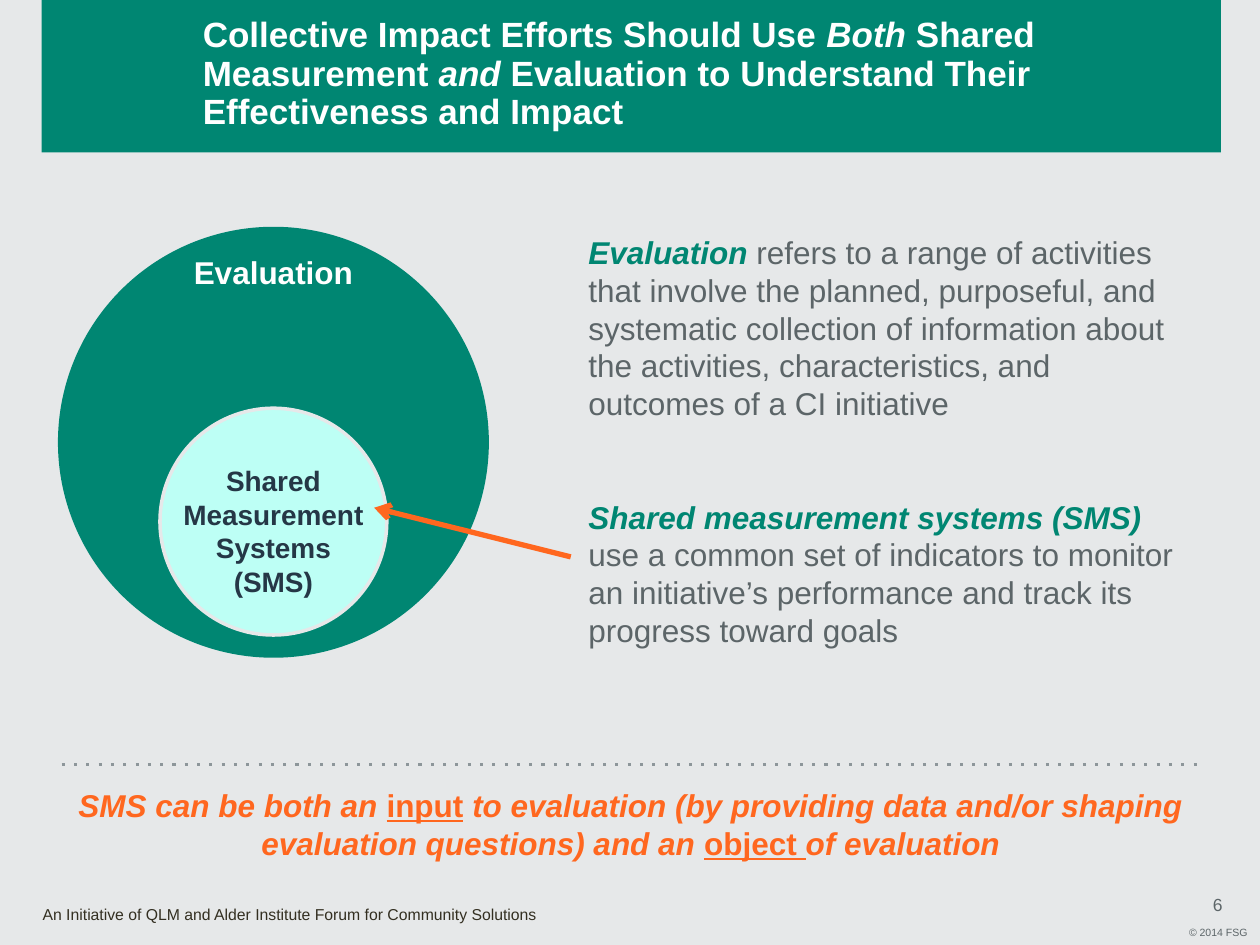
"""Build a slide on shared measurement and evaluation, laid out on a 100 by 75 grid."""
from dataclasses import dataclass
from typing import NamedTuple, Optional

import lxml.etree
import pptx
import pptx.dml.color
import pptx.enum.shapes
import pptx.enum.text
import pptx.oxml.ns
import pptx.util

WIDE, HIGH = pptx.util.Inches(10), pptx.util.Inches(7.5)
COLS, ROWS = 100, 75
HUES = {
    "back": "E6E8E9", "green": "008672", "mint": "BDFFF5", "orange": "FF671F",
    "white": "FFFFFF", "navy": "253746", "gray": "5C6568", "dots": "8D969A", "ink": "332F21",
}
KIND = pptx.enum.shapes.MSO_SHAPE
SIDE = pptx.enum.text.PP_ALIGN
HOLD = pptx.enum.text.MSO_ANCHOR


class Area(NamedTuple):
    col: float
    row: float
    cols: float
    rows: float


class Run(NamedTuple):
    text: str
    bold: Optional[bool] = None
    slant: Optional[bool] = None
    under: Optional[bool] = None
    hue: Optional[str] = None


@dataclass
class Form:
    kind: KIND
    area: Area
    fill: str
    edge: float = 0


@dataclass
class Rule:
    start: tuple[float, float]
    end: tuple[float, float]
    hue: str
    width: float
    trait: str
    style: dict[str, str]


@dataclass
class Note:
    area: Area
    paras: list[list[Run]]
    size: float
    hue: Optional[str] = None
    bold: Optional[bool] = None
    side: SIDE = SIDE.LEFT
    hold: HOLD = HOLD.TOP
    pads: tuple[float, float, float, float] = (1, 0.5, 1, 0.5)
    wrap: bool = True
    pitch: Optional[float] = None


def across(cols: float) -> int:
    return round(WIDE * cols / COLS)


def down(rows: float) -> int:
    return round(HIGH * rows / ROWS)


def place(area: Area) -> tuple[int, int, int, int]:
    return across(area.col), down(area.row), across(area.cols), down(area.rows)


def tint(name: str) -> pptx.dml.color.RGBColor:
    return pptx.dml.color.RGBColor.from_string(HUES[name])


def draw_form(slide: pptx.slide.Slide, form: Form) -> None:
    shape = slide.shapes.add_shape(form.kind, *place(form.area))
    shape.shadow.inherit = False
    shape.fill.solid()
    shape.fill.fore_color.rgb = tint(form.fill)
    if form.edge:
        shape.line.color.rgb = tint("back")
        shape.line.width = pptx.util.Pt(form.edge)
    else:
        shape.line.fill.background()


def draw_rule(slide: pptx.slide.Slide, rule: Rule) -> None:
    (left, top), (right, base) = rule.start, rule.end
    line = slide.shapes.add_connector(
        pptx.enum.shapes.MSO_CONNECTOR.STRAIGHT,
        across(left), down(top), across(right), down(base))
    line.line.color.rgb = tint(rule.hue)
    line.line.width = pptx.util.Pt(rule.width)
    name = pptx.oxml.ns.qn
    props = line._element.spPr
    lxml.etree.SubElement(props.find(name("a:ln")), name(rule.trait), rule.style)
    lxml.etree.SubElement(props, name("a:effectLst"))


def draw_note(slide: pptx.slide.Slide, note: Note) -> None:
    frame = slide.shapes.add_textbox(*place(note.area)).text_frame
    frame.word_wrap = note.wrap
    frame.vertical_anchor = note.hold
    left, top, right, base = note.pads
    frame.margin_left, frame.margin_right = across(left), across(right)
    frame.margin_top, frame.margin_bottom = down(top), down(base)
    for count, runs in enumerate(note.paras):
        para = frame.add_paragraph() if count else frame.paragraphs[0]
        para.alignment = note.side
        if note.pitch:
            para.line_spacing = pptx.util.Pt(note.pitch)
        para.font.name = "Arial"
        para.font.size = pptx.util.Pt(note.size)
        para.font.bold = note.bold
        if note.hue:
            para.font.color.rgb = tint(note.hue)
        for item in runs:
            for turn, text in enumerate(item.text.split("\n")):
                if turn:
                    para.add_line_break()
                run = para.add_run()
                run.text = text
                run.font.bold = item.bold
                run.font.italic = item.slant
                run.font.underline = item.under
                if item.hue:
                    run.font.color.rgb = tint(item.hue)


def define(row: float, rows: float, term: str, sense: str) -> Note:
    runs = [Run(term, bold=True, slant=True, hue="green"), Run(sense, hue="gray")]
    return Note(Area(46.7, row, 47.5, rows), [runs], 18, pads=(0, 0.5, 0.1, 0.5))


FORMS = [
    Form(KIND.RECTANGLE, Area(3.3, -0.1, 93.6, 12.2), "green"),
    Form(KIND.OVAL, Area(4.6, 18, 34.2, 34.2), "green"),
    Form(KIND.OVAL, Area(12.7, 32.4, 18, 18), "mint", 2),
]
RULES = [
    Rule((4.9, 60.7), (95.7, 60.7), "dots", 1.75, "a:prstDash", {"val": "dot"}),
    Rule((29.7, 40.3), (45.3, 44.2), "orange", 3, "a:headEnd", {"type": "arrow"}),
]
NOTES = [
    Note(Area(2.4, 71.3, 56.4, 2.5),
         [[Run("An Initiative of QLM and Alder Institute Forum for Community Solutions")]],
         9, "ink"),
    Note(Area(94.8, 70.7, 3.7, 2.1), [[Run("6")]], 10, "gray", side=SIDE.CENTER,
         hold=HOLD.MIDDLE, pads=(1, 0.2, 1, 0.2), wrap=False),
    Note(Area(93.3, 73, 6.7, 2), [[Run("© 2014 FSG")]], 6, "gray", side=SIDE.RIGHT,
         hold=HOLD.MIDDLE, wrap=False),
    Note(Area(16.1, 0.9, 80, 9.9), [[
        Run("Collective Impact Efforts Should Use "), Run("Both ", slant=True),
        Run("Shared Measurement "), Run("and ", slant=True),
        Run("Evaluation to Understand Their Effectiveness and Impact"),
    ]], 20, "white", True, hold=HOLD.MIDDLE, pads=(0, 0.5, 0, 0.5), pitch=22),
    Note(Area(13.7, 19.6, 16, 4), [[Run("Evaluation")]], 18, "white", True, SIDE.CENTER),
    Note(Area(13.2, 36.3, 17, 11.8), [[Run("Shared Measurement")], [Run("Systems\n(SMS)")]],
         16, "navy", True, SIDE.CENTER),
    define(18, 16.2, "Evaluation ",
           "refers to a range of activities that involve the planned, purposeful, and "
           "systematic collection of information about the activities, characteristics, "
           "and outcomes of a CI initiative"),
    define(39, 13.1, "Shared measurement systems (SMS) ",
           "use a common set of indicators to monitor an initiative’s performance and "
           "track its progress toward goals"),
    Note(Area(2.6, 61.1, 94.9, 8.6), [[
        Run("SMS can be both an ", slant=True), Run("input", under=True), Run(" "),
        Run("to evaluation (by providing data and/or shaping evaluation questions) and an ",
            slant=True),
        Run("object ", under=True), Run("of evaluation", slant=True),
    ]], 18, "orange", True, SIDE.CENTER, HOLD.MIDDLE, (1, 0, 1, 0)),
]


def main() -> None:
    deck = pptx.Presentation()
    deck.slide_width, deck.slide_height = WIDE, HIGH
    slide = deck.slides.add_slide(deck.slide_layouts[6])
    slide.background.fill.solid()
    slide.background.fill.fore_color.rgb = tint("back")
    for form in FORMS:
        draw_form(slide, form)
    for rule in RULES:
        draw_rule(slide, rule)
    for note in NOTES:
        draw_note(slide, note)
    deck.save("out.pptx")


if __name__ == "__main__":
    main()
